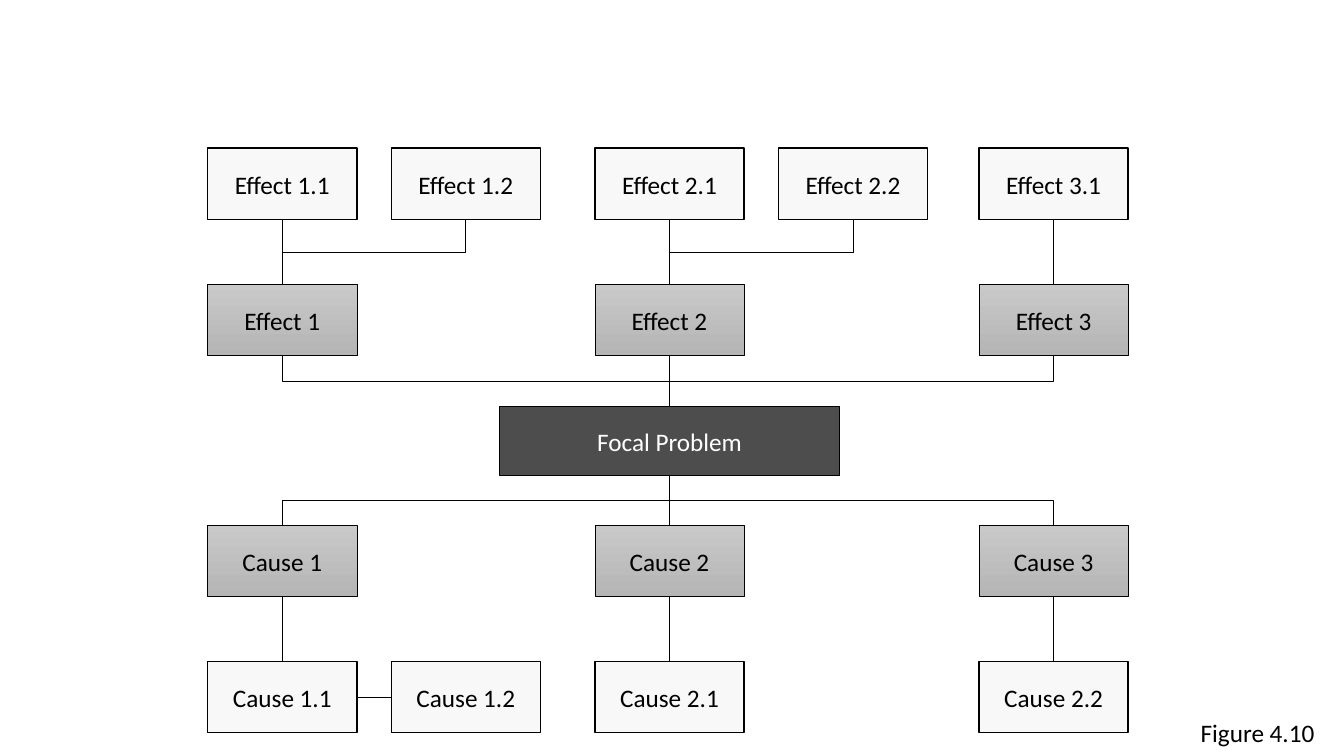
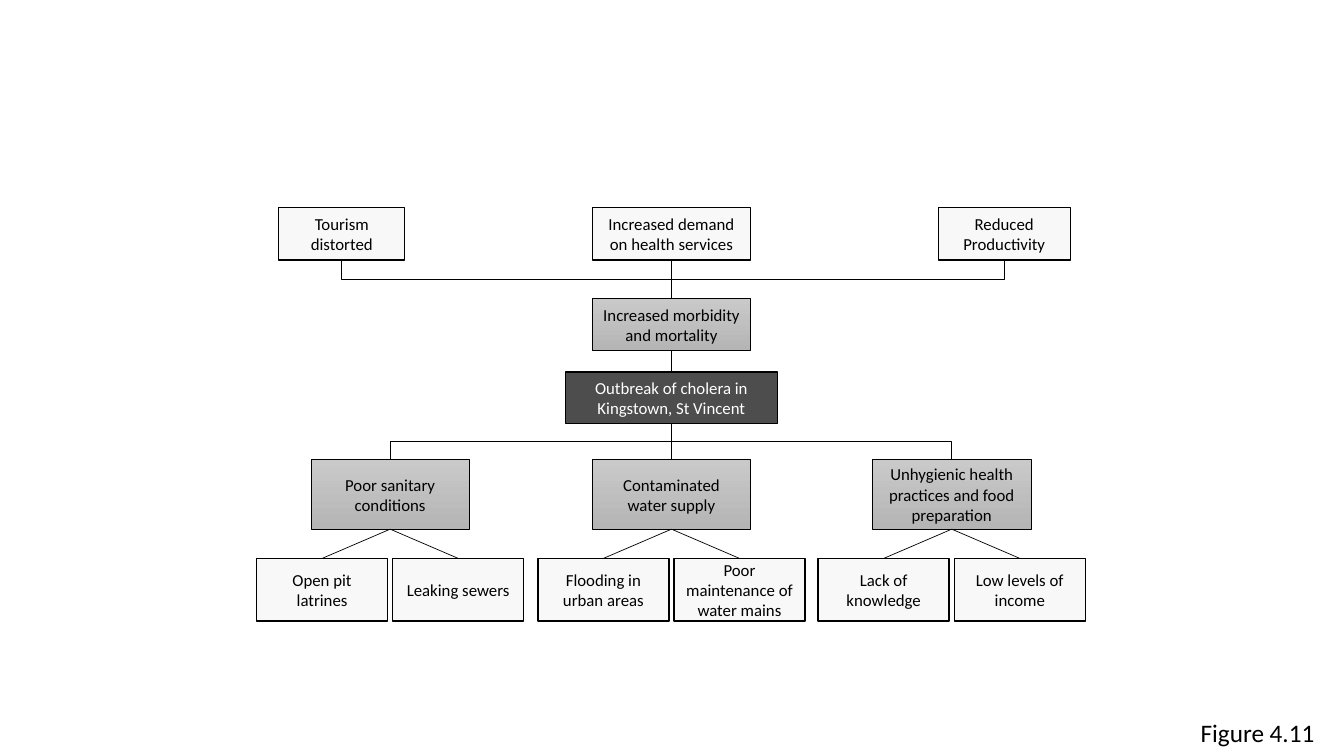
"""Builds two problem tree slides, one generic and one worked example."""
from pptx import Presentation
from pptx.dml.color import RGBColor
from pptx.enum.shapes import MSO_CONNECTOR, MSO_SHAPE
from pptx.enum.text import MSO_ANCHOR, MSO_AUTO_SIZE, PP_ALIGN
from pptx.oxml.ns import qn
from pptx.util import Inches, Pt
from lxml import etree

BLACK, WHITE = "000000", "FFFFFF"
LEVELS = {
    "focal": {"fills": ["4D4D4D"], "ink": WHITE, "border": 1},
    "main": {"fills": ["C9C9C9", "B5B5B5"], "ink": BLACK, "border": 0.5},
    "detail": {"fills": ["F8F8F8"], "ink": BLACK, "border": 1},
}
CAPTION_AREA = (11.81, 7.07, 1.52, 0.4)
CAPTION_SIZE = 18
TOP, LEFT, BOTTOM, RIGHT = range(4)

LEFT_COL, MID_COL, RIGHT_COL = 2.8, 6.64, 10.45
SIDE_STEP = 1.82
SANITATION, WATER, HYGIENE = 3.87, 6.66, 9.44
HALF_PAIR = 1.35 / 2

FIGURES = [
    {
        "caption": "Figure 4.10",
        "size": 18,
        "rows": [
            ("detail", 1.47, 0.71, [
                ("Effect 1.1", LEFT_COL, 1.48), ("Effect 1.2", LEFT_COL + SIDE_STEP, 1.48),
                ("Effect 2.1", MID_COL, 1.48), ("Effect 2.2", MID_COL + SIDE_STEP, 1.48),
                ("Effect 3.1", RIGHT_COL, 1.48)]),
            ("main", 2.82, 0.71, [
                ("Effect 1", LEFT_COL, 1.48), ("Effect 2", MID_COL, 1.48),
                ("Effect 3", RIGHT_COL, 1.48)]),
            ("focal", 4.03, 0.69, [("Focal Problem", MID_COL, 3.37)]),
            ("main", 5.21, 0.71, [
                ("Cause 1", LEFT_COL, 1.48), ("Cause 2", MID_COL, 1.48),
                ("Cause 3", RIGHT_COL, 1.48)]),
            ("detail", 6.56, 0.71, [
                ("Cause 1.1", LEFT_COL, 1.48), ("Cause 1.2", LEFT_COL + SIDE_STEP, 1.48),
                ("Cause 2.1", MID_COL, 1.48), ("Cause 2.2", RIGHT_COL, 1.48)]),
        ],
        "elbows": [
            ("Effect 1.2", "Effect 1"), ("Effect 2.2", "Effect 2"),
            ("Effect 1", "Focal Problem"), ("Effect 3", "Focal Problem"),
            ("Focal Problem", "Cause 1"), ("Focal Problem", "Cause 3"),
        ],
        "straights": [
            ("Effect 1.1", "Effect 1"), ("Effect 2.1", "Effect 2"),
            ("Effect 3.1", "Effect 3"), ("Effect 2", "Focal Problem"),
            ("Focal Problem", "Cause 2"), ("Cause 1", "Cause 1.1"),
            ("Cause 1.1", "Cause 1.2"), ("Cause 2", "Cause 2.1"),
            ("Cause 3", "Cause 2.2"),
        ],
    },
    {
        "caption": "Figure 4.11",
        "size": 12,
        "rows": [
            ("detail", 2.06, 0.52, [
                ("Tourism distorted", 3.39, 1.25),
                ("Increased demand on health services", WATER, 1.57),
                ("Reduced Productivity", 9.96, 1.31)]),
            ("main", 2.96, 0.52, [("Increased morbidity and mortality", WATER, 1.57)]),
            ("focal", 3.69, 0.51, [
                ("Outbreak of cholera in Kingstown, St Vincent", WATER, 2.1)]),
            ("main", 4.56, 0.69, [
                ("Poor sanitary conditions", SANITATION, 1.57),
                ("Contaminated water supply", WATER, 1.57),
                ("Unhygienic health practices and food preparation", HYGIENE, 1.57)]),
            ("detail", 5.54, 0.62, [
                ("Open pit latrines", SANITATION - HALF_PAIR, 1.3),
                ("Leaking sewers", SANITATION + HALF_PAIR, 1.3),
                ("Flooding in urban areas", WATER - HALF_PAIR, 1.3),
                ("Poor maintenance of water mains", WATER + HALF_PAIR, 1.3),
                ("Lack of knowledge", HYGIENE - HALF_PAIR, 1.3),
                ("Low levels of income", HYGIENE + HALF_PAIR, 1.3)]),
        ],
        "elbows": [
            ("Tourism distorted", "Increased morbidity and mortality"),
            ("Reduced Productivity", "Increased morbidity and mortality"),
            ("Outbreak of cholera in Kingstown, St Vincent", "Poor sanitary conditions"),
            ("Outbreak of cholera in Kingstown, St Vincent",
             "Unhygienic health practices and food preparation"),
        ],
        "straights": [
            ("Increased demand on health services", "Increased morbidity and mortality"),
            ("Increased morbidity and mortality",
             "Outbreak of cholera in Kingstown, St Vincent"),
            ("Outbreak of cholera in Kingstown, St Vincent", "Contaminated water supply"),
            ("Poor sanitary conditions", "Open pit latrines"),
            ("Poor sanitary conditions", "Leaking sewers"),
            ("Contaminated water supply", "Flooding in urban areas"),
            ("Contaminated water supply", "Poor maintenance of water mains"),
            ("Unhygienic health practices and food preparation", "Lack of knowledge"),
            ("Unhygienic health practices and food preparation", "Low levels of income"),
        ],
    },
]


def colour(value):
    return RGBColor.from_string(value)


def write(frame, text, size, ink, **layout):
    for attribute, value in {"word_wrap": True, **layout}.items():
        setattr(frame, attribute, value)
    paragraph = frame.paragraphs[0]
    paragraph.text = text
    for attribute, value in {"name": "Calibri", "size": Pt(size)}.items():
        setattr(paragraph.font, attribute, value)
    paragraph.font.color.rgb = colour(ink)
    return paragraph


def draw_line(line, width):
    line.color.rgb = colour(BLACK)
    line.width = Pt(width)


def paint(fill, fills):
    if len(fills) == 1:
        fill.solid()
        fill.fore_color.rgb = colour(fills[0])
        return
    fill.gradient()
    fill.gradient_angle = 270
    for stop, shade in zip(fill.gradient_stops, fills):
        stop.color.rgb = colour(shade)


def add_box(slide, text, level, size, centre, top, width, height):
    area = (centre - width / 2, top, width, height)
    box = slide.shapes.add_shape(MSO_SHAPE.RECTANGLE, *map(Inches, area))
    box.shadow.inherit = False
    look = LEVELS[level]
    paint(box.fill, look["fills"])
    draw_line(box.line, look["border"])
    label = write(box.text_frame, text, size, look["ink"], vertical_anchor=MSO_ANCHOR.MIDDLE)
    label.alignment = PP_ALIGN.CENTER
    return box


def bend_vertically(link):
    span, drop = link.width, link.height
    middle_x, middle_y = link.left + span // 2, link.top + drop // 2
    goes_right = link.end_x > link.begin_x
    link.left, link.top = middle_x - drop // 2, middle_y - span // 2
    link.width, link.height = drop, span
    frame = link._element.spPr.find(qn("a:xfrm"))
    for flip in ("flipH", "flipV"):
        frame.attrib.pop(flip, None)
    frame.set("rot", "16200000" if goes_right else "5400000")
    if goes_right:
        frame.set("flipH", "1")


def add_link(slide, kind, upper, lower):
    link = slide.shapes.add_connector(kind, 0, 0, 0, 0)
    sites = (RIGHT, LEFT) if upper.top == lower.top else (BOTTOM, TOP)
    link.begin_connect(upper, sites[0])
    link.end_connect(lower, sites[1])
    draw_line(link.line, 0.5)
    etree.SubElement(link._element.spPr, qn("a:effectLst"))
    if kind == MSO_CONNECTOR.ELBOW:
        bend_vertically(link)


def add_figure(deck, figure):
    slide = deck.slides.add_slide(deck.slide_layouts[6])
    boxes = {}
    for level, top, height, row in figure["rows"]:
        for text, centre, width in row:
            boxes[text] = add_box(slide, text, level, figure["size"], centre, top, width, height)
    for group, kind in (("elbows", MSO_CONNECTOR.ELBOW), ("straights", MSO_CONNECTOR.STRAIGHT)):
        for upper, lower in figure[group]:
            add_link(slide, kind, boxes[upper], boxes[lower])
    caption = slide.shapes.add_textbox(*map(Inches, CAPTION_AREA))
    write(caption.text_frame, figure["caption"], CAPTION_SIZE, BLACK,
          auto_size=MSO_AUTO_SIZE.SHAPE_TO_FIT_TEXT)


def main():
    deck = Presentation()
    deck.slide_width, deck.slide_height = Inches(13.33), Inches(7.5)
    for figure in FIGURES:
        add_figure(deck, figure)
    deck.save("out.pptx")


if __name__ == "__main__":
    main()
